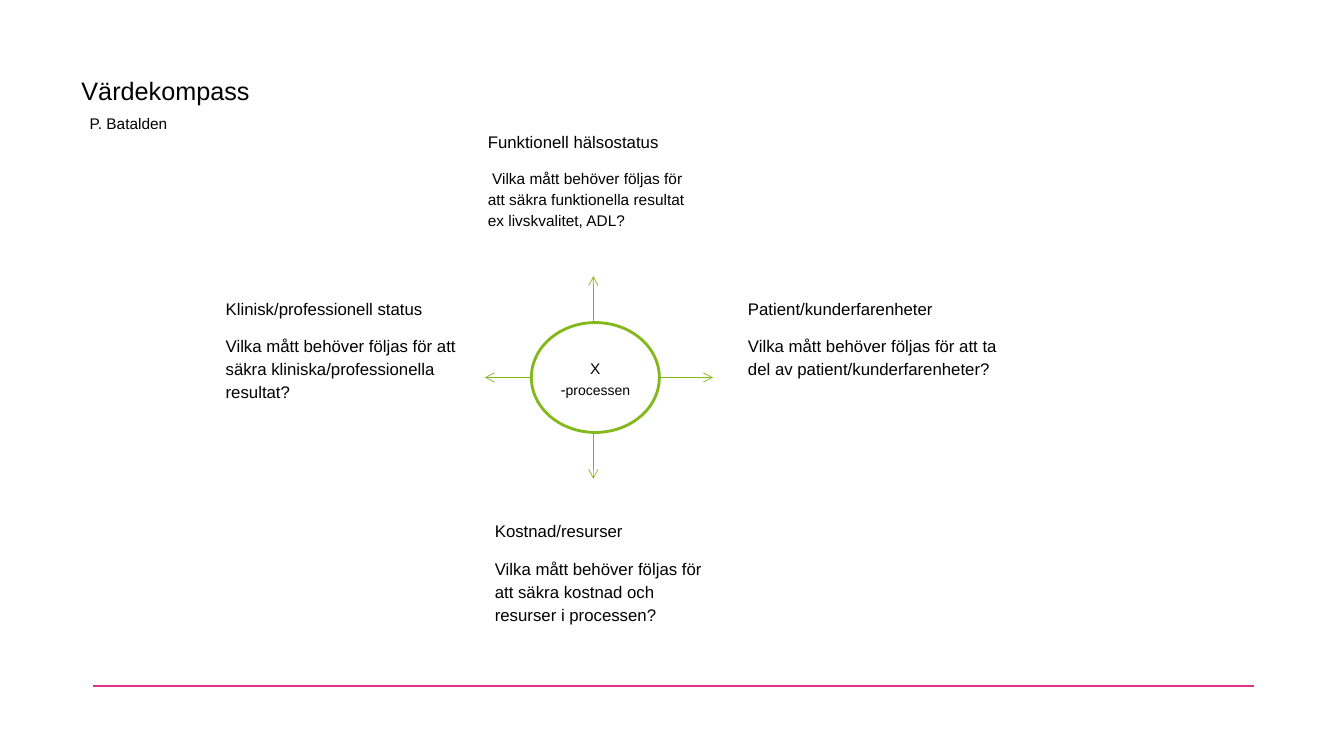
from lxml.etree import SubElement
from pptx import Presentation
from pptx.dml.color import RGBColor
from pptx.enum.shapes import MSO_CONNECTOR, MSO_SHAPE
from pptx.enum.text import MSO_ANCHOR, PP_ALIGN
from pptx.oxml.ns import qn
from pptx.util import Inches, Pt

COLORS = {"text": "000000", "panel": "FFFFFF", "green": "83B81A", "pink": "E13288"}
FONT = "Arial"
CELL = Inches(0.1)
PANELS = [
    (-5.3, -19.7, 23.3, 13.1, "Funktionell hälsostatus", 11,
     " Vilka mått behöver följas för att säkra funktionella resultat ex livskvalitet, ADL?"),
    (20.5, -3.2, 28.5, 13.1, "Patient/kunderfarenheter", 12,
     "Vilka mått behöver följas för att ta del av patient/kunderfarenheter?"),
    (-31.3, -3.2, 26.7, 17.3, "Klinisk/professionell status", 12,
     "Vilka mått behöver följas för att säkra kliniska/professionella resultat?"),
    (-4.6, 18.9, 23.3, 13.1, "Kostnad/resurser", 12,
     "Vilka mått behöver följas för att säkra kostnad och resurser i processen?"),
]


def cells(*counts):
    """Turn grid cell counts into lengths."""
    return [round(n * CELL) for n in counts]


def rgb(name):
    """Look up a colour by its role."""
    return RGBColor.from_string(COLORS[name])


def add_run(p, text, size):
    """Add one run of text to a paragraph."""
    r = p.add_run()
    r.text = text
    r.font.name, r.font.size = FONT, Pt(size)
    r.font.color.rgb = rgb("text")


def add_line(s, start, end, color, width, arrow=False):
    """Draw a straight line, with an open arrowhead if asked for."""
    line = s.shapes.add_connector(MSO_CONNECTOR.STRAIGHT, *cells(*start, *end))
    line.line.color.rgb, line.line.width = rgb(color), Pt(width)
    if arrow:
        SubElement(line.line._get_or_add_ln(), qn("a:tailEnd"), type="arrow")
    SubElement(line._element.spPr, qn("a:effectLst"))


def add_block(s, kind, box, paragraphs, align=PP_ALIGN.LEFT, anchor=MSO_ANCHOR.TOP):
    """Add a white shape whose paragraphs are lists of text and size."""
    sp = s.shapes.add_shape(kind, *cells(*box))
    sp.shadow.inherit = False
    sp.fill.solid()
    sp.fill.fore_color.rgb = rgb("panel")
    sp.line.fill.background()
    tf = sp.text_frame
    tf.word_wrap, tf.vertical_anchor = True, anchor
    for i, runs in enumerate(paragraphs):
        p = tf.add_paragraph() if i else tf.paragraphs[0]
        p.alignment, p.line_spacing, p.space_after = align, 1.15, Pt(10)
        for text, size in runs:
            add_run(p, text, size)
    return sp


def add_heading(s, box):
    """Place the title and the author line in the box."""
    x, y, w, h = box
    for dx, dy, share, text, size in [(0, 0, 1, "Värdekompass", 18),
                                      (0.8, 3.8, 0.7, "P. Batalden", 11)]:
        tb = s.shapes.add_textbox(*cells(x + dx, y + dy, w * share, h))
        tb.text_frame.word_wrap = True
        add_run(tb.text_frame.paragraphs[0], text, size)


def add_compass(s, box):
    """Place the hub in the box, with arrows and four panels around it."""
    x, y, w, h = box
    hub = add_block(s, MSO_SHAPE.OVAL, box, [[("X -", 11), ("processen", 10)]],
                    PP_ALIGN.CENTER, MSO_ANCHOR.MIDDLE)
    hub.line.color.rgb, hub.line.width = rgb("green"), Pt(2)
    for dx, dy, pw, ph, head, size, question in PANELS:
        add_block(s, MSO_SHAPE.RECTANGLE, (x + dx, y + dy, pw, ph),
                  [[(head, 12)], [(question, size)]])
    cx, cy = x + w / 2 - 0.2, y + h / 2
    for start, dx, dy in [((cx, y + h), 0, 4.6), ((x, cy), -4.6, 0),
                          ((cx, y), 0, -4.6), ((x + w, cy), 5.3, 0)]:
        add_line(s, start, (start[0] + dx, start[1] + dy), "green", 0.5, True)


def main():
    """Build the slide and save it."""
    prs = Presentation()
    prs.slide_width, prs.slide_height = Inches(13.33), Inches(7.5)
    s = prs.slides.add_slide(prs.slide_layouts[6])
    add_line(s, (9.2, 68.1), (124.4, 68.1), "pink", 1.5)
    add_compass(s, (52.7, 32, 12.7, 10.9))
    add_heading(s, (7.1, 7, 30.7, 4))
    prs.save("out.pptx")


if __name__ == "__main__":
    main()
